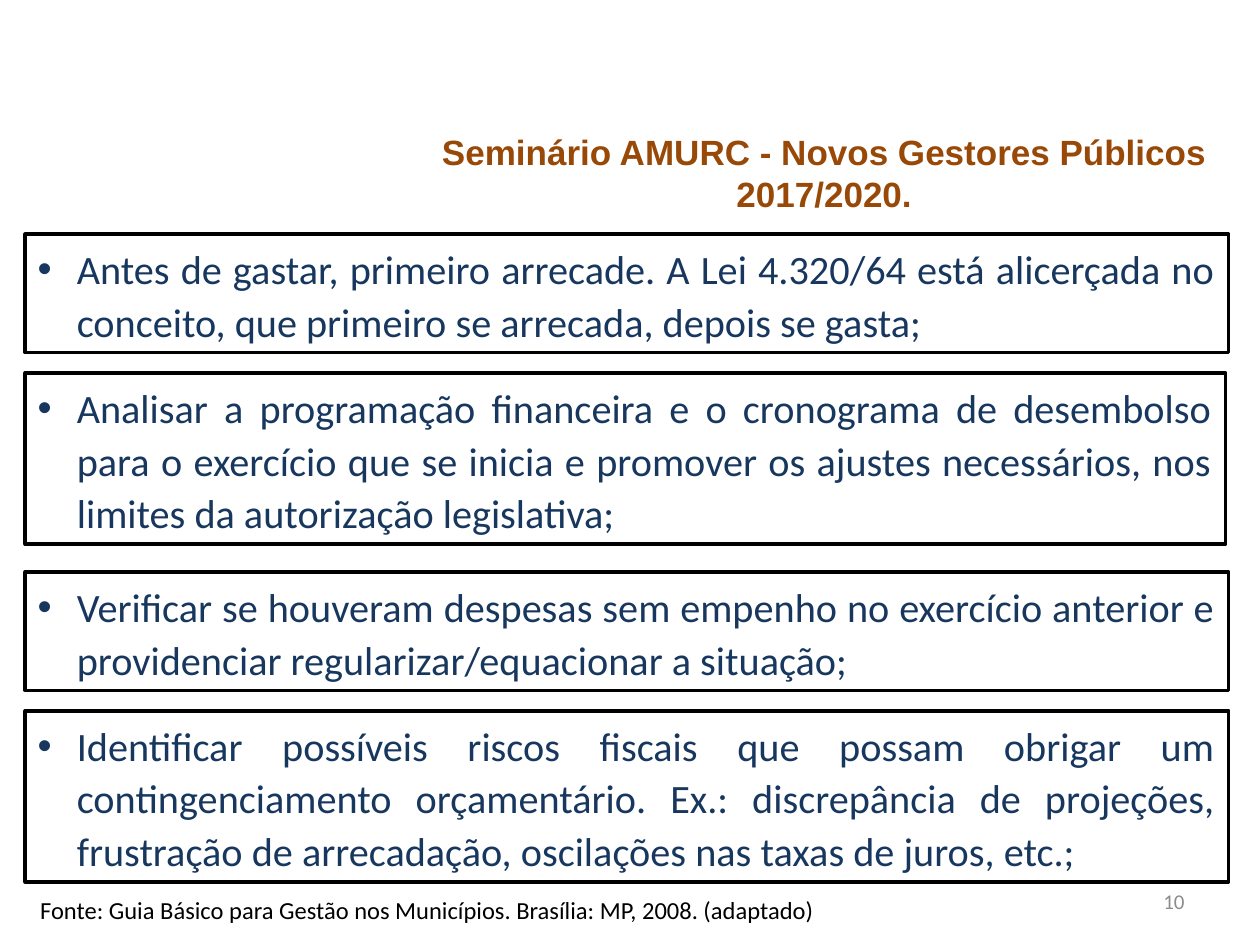
from lxml import etree
from pptx import Presentation
from pptx.dml.color import RGBColor
from pptx.enum.text import MSO_ANCHOR, MSO_AUTO_SIZE, PP_ALIGN
from pptx.oxml.ns import qn
from pptx.util import Cm, Pt

LEFT, CENTER, RIGHT, JUSTIFY = PP_ALIGN.LEFT, PP_ALIGN.CENTER, PP_ALIGN.RIGHT, PP_ALIGN.JUSTIFY
TOP, MIDDLE = MSO_ANCHOR.TOP, MSO_ANCHOR.MIDDLE
NO_AUTOFIT = MSO_AUTO_SIZE.NONE

WHITE = RGBColor(0xFF, 0xFF, 0xFF)
BLACK = RGBColor(0x00, 0x00, 0x00)
NAVY = RGBColor(0x17, 0x37, 0x5E)
BROWN = RGBColor(0x98, 0x48, 0x07)
GRAY = RGBColor(0x8C, 0x8C, 0x8C)

CARD_WIDTH = 24.26
CARDS = [
    (4.72, CARD_WIDTH, 2, "Antes de gastar, primeiro arrecade. A Lei 4.320/64 está alicerçada no "
     "conceito, que primeiro se arrecada, depois se gasta;"),
    (7.52, 24.2, 3, "Analisar a programação financeira e o cronograma de desembolso para o "
     "exercício que se inicia e promover os ajustes necessários, nos limites da autorização "
     "legislativa;"),
    (11.53, CARD_WIDTH, 2, "Verificar se houveram despesas sem empenho no exercício anterior e "
     "providenciar regularizar/equacionar a situação;"),
    (14.33, CARD_WIDTH, 3, "Identificar possíveis riscos fiscais que possam obrigar um "
     "contingenciamento orçamentário. Ex.: discrepância de projeções, frustração de arrecadação, "
     "oscilações nas taxas de juros, etc.;"),
]


class SlideBuilder:
    """Hold the text style and the current slide, and add its elements."""

    body_font = "Calibri"
    title_font = "Arial"
    line_height = 1.06
    padding = 0.27
    indent = Cm(0.79)

    def __init__(self, deck):
        self.page = deck.slides.add_slide(deck.slide_layouts[5])

    def set_text(self, box, text, size, color, align, anchor=TOP):
        frame = box.text_frame
        frame.word_wrap = True
        frame.auto_size = NO_AUTOFIT
        frame.vertical_anchor = anchor
        para = frame.paragraphs[0]
        para.text = text
        para.alignment = align
        para.font.name = self.body_font
        para.font.size = Pt(size)
        para.font.color.rgb = color
        return para

    def title(self, text):
        box = self.page.shapes.title
        box.left, box.top, box.width, box.height = Cm(8.51), Cm(2.51), Cm(16.21), Cm(1.96)
        para = self.set_text(box, text, 20, BROWN, CENTER)
        para.font.name = self.title_font
        para.font.bold = True

    def label(self, left, top, width, height, *style):
        box = self.page.shapes.add_textbox(Cm(left), Cm(top), Cm(width), Cm(height))
        return box, self.set_text(box, *style)

    def card(self, top, width, lines, text):
        height = lines * self.line_height + self.padding
        box, para = self.label(0.51, top, width, height, text, 23, NAVY, JUSTIFY)
        box.fill.solid()
        box.fill.fore_color.rgb = WHITE
        box.line.color.rgb = BLACK
        box.line.width = Pt(2)
        self.bullet(para)
        para.line_spacing = Pt(30)

    def bullet(self, para):
        properties = para._p.get_or_add_pPr()
        properties.set("marL", str(self.indent))
        properties.set("indent", str(-self.indent))
        font = etree.Element(qn("a:buFont"), typeface=self.title_font)
        mark = etree.Element(qn("a:buChar"), char="•")
        properties.insert(0, font)
        properties.insert(1, mark)


def main():
    deck = Presentation()
    deck.slide_width, deck.slide_height = Cm(25.4), Cm(19.05)
    slide = SlideBuilder(deck)
    slide.title("Seminário AMURC - Novos Gestores Públicos 2017/2020.")
    for card in CARDS:
        slide.card(*card)
    slide.label(0.56, 17.91, 18.14, 0.86,
                "Fonte: Guia Básico para Gestão nos Municípios. Brasília: MP, 2008. (adaptado)",
                14, BLACK, LEFT)
    slide.label(18.21, 17.65, 5.92, 1.02, "10", 12, GRAY, RIGHT, MIDDLE)
    deck.save("out.pptx")


if __name__ == "__main__":
    main()
